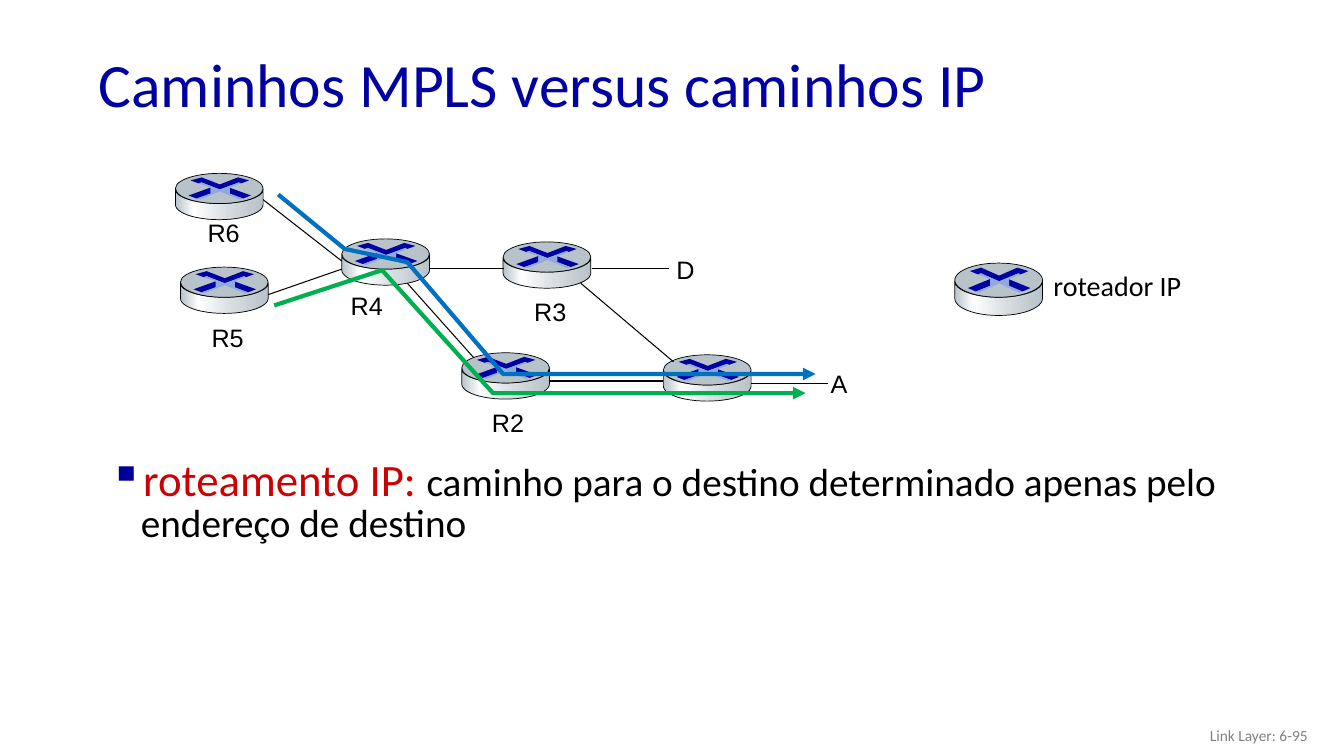
from copy import deepcopy
from math import cos, pi, sin

from lxml.etree import SubElement
from pptx import Presentation
from pptx.dml.color import RGBColor
from pptx.enum.shapes import MSO_CONNECTOR as Link, MSO_SHAPE as Shape
from pptx.enum.text import MSO_ANCHOR as Anchor, PP_ALIGN as Align
from pptx.oxml.ns import qn
from pptx.util import Pt

PX = 9144
WIDE, HIGH = 87, 46
CROSS = [(62, 4), (73, 7), (65, 10), (63, 9), (44, 16), (26, 9), (23, 10), (15, 7), (26, 4), (44, 11)]
RIGHT = [(53, 14), (75, 22), (67, 25), (53, 20)]
LEFT = [(35, 14), (35, 20), (21, 25), (13, 22)]
GLOW = [(23, 10), (26, 9), (44, 16), (63, 9), (65, 10), (54, 14), (54, 20), (67, 25), (64, 26),
        (44, 18), (24, 26), (21, 25), (35, 20), (35, 14)]
MARKS = [(CROSS, "0000A3"), (RIGHT, "0000A3"), (LEFT, "0000A8"), (GLOW, "8FAADC")]
STEEL = [(0, "B8C2C9"), (0.21, "FFFFFF"), (0.6, "D6DCE0"), (1, "B8C2C9")]


def px(*nums):
    return [round(n * PX) for n in nums]


def color(code):
    return RGBColor.from_string(code)


def paint(shape, fill=None, line=None, width=0.5):
    shape.shadow.inherit = False
    if fill:
        shape.fill.solid()
        shape.fill.fore_color.rgb = color(fill)
    else:
        shape.fill.background()
    if line:
        shape.line.color.rgb = color(line)
        shape.line.width = Pt(width)
    else:
        shape.line.fill.background()


def form(shapes, pts, close=True):
    first, *rest = [px(*pt) for pt in pts]
    pen = shapes.build_freeform(*first, scale=1.0)
    pen.add_line_segments(rest, close=close)
    return pen.convert_to_shape()


def shade(shape):
    shape.fill.gradient()
    shape.fill.gradient_angle = 0
    stops = shape._element.spPr.find(".//" + qn("a:gsLst"))
    while len(stops) < len(STEEL):
        stops.append(deepcopy(stops[0]))
    for stop, (pos, code) in zip(shape.fill.gradient_stops, STEEL):
        stop.position = pos
        stop.color.rgb = color(code)


def router(slide, x, y, high=HIGH):
    group = slide.shapes.add_group_shape().shapes
    grow = high / HIGH
    half = WIDE / 2
    turns = [pi * i / 24 for i in range(25)]
    low = [(half + half * cos(t), 31 + 15 * sin(t)) for t in turns]
    top = [(half - half * cos(t), 16 + 14 * sin(t)) for t in turns]

    def place(pts):
        return [(x + a, y + b * grow) for a, b in pts]

    wall = form(group, place(low + top))
    paint(wall, line="000000")
    shade(wall)
    lid = group.add_shape(Shape.OVAL, *px(x, y, WIDE, 30 * grow))
    paint(lid, "B8C2C9", "000000")
    for pts, code in MARKS:
        paint(form(group, place(pts)), code)


def text(slide, box, runs, wrap=True, anchor=Anchor.TOP, align=Align.LEFT, space=None):
    frame = slide.shapes.add_textbox(*px(*box)).text_frame
    frame.word_wrap = wrap
    frame.vertical_anchor = anchor
    para = frame.paragraphs[0]
    para.alignment = align
    if space:
        para.line_spacing = space
    for words, size, font, code in runs:
        run = para.add_run()
        run.text = words
        run.font.size = Pt(size)
        run.font.name = font
        run.font.color.rgb = color(code)
    return para


def wire(slide, ends):
    line = slide.shapes.add_connector(Link.STRAIGHT, *px(*ends))
    line.line.color.rgb = color("000000")
    line.line.width = Pt(0.75)
    SubElement(line._element.spPr, qn("a:effectLst"))


def route(slide, x, y, pts, code):
    shape = form(slide.shapes, [(x + a, y + b) for a, b in pts], False)
    paint(shape, line=code, width=3)
    SubElement(shape.line._get_or_add_ln(), qn("a:tailEnd"), type="triangle")


def title(slide, x, y, w, h):
    text(slide, (x, y, w, h), [("Caminhos MPLS versus caminhos IP", 44, "Calibri", "0000A3")],
         anchor=Anchor.MIDDLE, space=0.9)


def graph(slide, x, y):
    for a, b in [(165, 65), (325, 68), (284, 178), (484, 180)]:
        router(slide, x + a, y + b)
    for a, b, c, d in [(83, 23, 165, 87), (90, 121, 165, 95), (253, 94, 326, 94), (230, 109, 296, 183),
                       (371, 206, 484, 206), (402, 109, 494, 187), (571, 208, 647, 208), (413, 94, 490, 94)]:
        wire(slide, (x + a, y + b, x + c, y + d))
    for a, b in [(0, 0), (5, 93)]:
        router(slide, x + a, y + b)
    for name, a, b, w in [("R2", 304, 227, 52), ("D", 487, 75, 38), ("R3", 346, 117, 52), ("R5", 26, 143, 52),
                          ("A", 640, 188, 37), ("R6", 22, 39, 52), ("R4", 164, 111, 52)]:
        text(slide, (x + a, y + b, w, 40), [(name, 18, "Arial", "000000")], wrap=False)
    route(slide, x, y, [(102, 21), (168, 75), (230, 88), (325, 199), (635, 199)], "0070C0")
    route(slide, x, y, [(98, 131), (205, 96), (315, 218), (625, 218)], "00B050")


def legend(slide, x, y):
    router(slide, x, y, 52)
    text(slide, (x + 88, y, 148, 44), [("roteador IP", 20, "Calibri", "000000")], wrap=False)


def note(slide, x, y, w, h):
    runs = [("roteamento IP: ", 32, "Calibri", "CC0000"),
            ("caminho para o destino determinado apenas pelo endereço de destino", 28, "Calibri", "000000")]
    para = text(slide, (x, y, w, h), runs, space=0.85)
    props = para._p.get_or_add_pPr()
    props.set("marL", str(31 * PX))
    props.set("indent", str(-31 * PX))
    tint = SubElement(props, qn("a:buClr"))
    SubElement(tint, qn("a:srgbClr"), val="000099")
    SubElement(props, qn("a:buChar"), char="▪")


def foot(slide, x, y, w, h):
    text(slide, (x, y, w, h), [("Link Layer: 6-95", 11, "Calibri", "808080")],
         anchor=Anchor.MIDDLE, align=Align.RIGHT)


def main():
    deck = Presentation()
    deck.slide_width, deck.slide_height = px(1333, 750)
    slide = deck.slides.add_slide(deck.slide_layouts[6])
    title(slide, 88, 38, 1150, 98)
    graph(slide, 174, 172)
    legend(slide, 947, 261)
    note(slide, 99, 451, 1217, 62)
    foot(slide, 1007, 710, 300, 40)
    deck.save("out.pptx")


if __name__ == "__main__":
    main()
